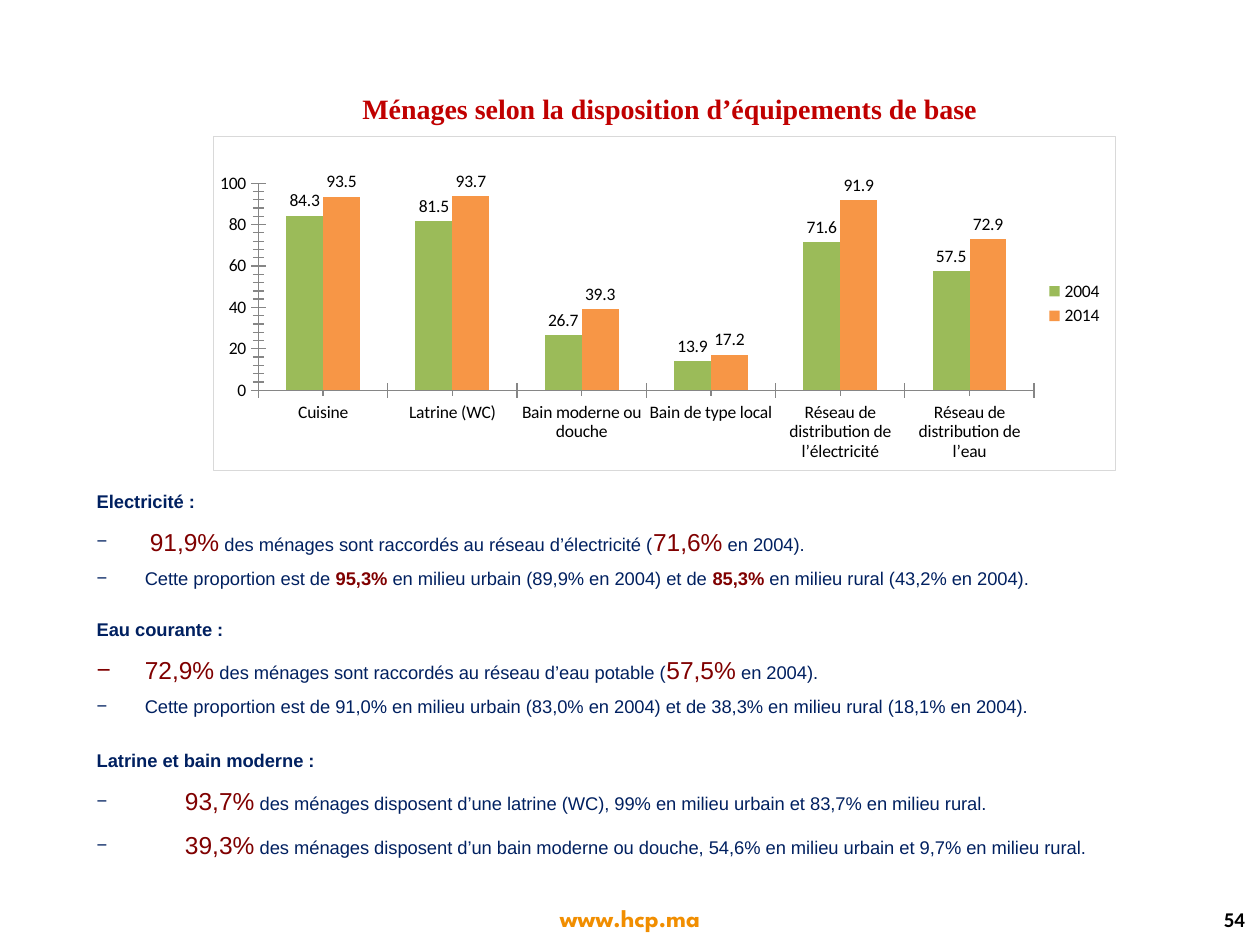
from lxml.etree import SubElement
from pptx import Presentation
from pptx.chart.data import CategoryChartData as ChartData
from pptx.dml.color import RGBColor
from pptx.enum.chart import XL_CHART_TYPE as ChartType, XL_LABEL_POSITION as LabelPos
from pptx.enum.chart import XL_LEGEND_POSITION as LegendPos, XL_TICK_MARK as Tick
from pptx.enum.text import MSO_ANCHOR as Anchor, PP_ALIGN as Align
from pptx.oxml import parse_xml
from pptx.oxml.ns import nsdecls, qn
from pptx.util import Cm, Pt

NAVY, MAROON, BLACK = "002060", "800000", "000000"
EQUIPMENT = ["Cuisine", "Latrine (WC)", "Bain moderne ou douche", "Bain de type local",
             "Réseau de distribution de l’électricité", "Réseau de distribution de l’eau"]
SHARES = {"2004": ("9BBB59", [84.3, 81.5, 26.7, 13.9, 71.6, 57.5]),
          "2014": ("F79646", [93.5, 93.7, 39.3, 17.2, 91.9, 72.9])}
# Key figures stand between bars.
FINDINGS = [
    ("Electricité :", 0, [
        (1.07, 14, NAVY, "|91,9%| des ménages sont raccordés au réseau d’électricité (|71,6%| en 2004)."),
        (0.97, 10.5, NAVY, "Cette proportion est de |95,3%| en milieu urbain (89,9% en 2004) et de "
                           "|85,3%| en milieu rural (43,2% en 2004).")]),
    ("Eau courante :", 10.4, [
        (0.97, 14, MAROON, "|72,9%| des ménages sont raccordés au réseau d’eau potable (|57,5%| en 2004)."),
        (0.97, 10.5, NAVY, "Cette proportion est de 91,0% en milieu urbain (83,0% en 2004) et de "
                           "38,3% en milieu rural (18,1% en 2004).")]),
    ("Latrine et bain moderne :", 12, [
        (1.78, 14, NAVY, "|93,7%| des ménages disposent d’une latrine (WC), 99% en milieu urbain et "
                         "83,7% en milieu rural."),
        (1.78, 14, NAVY, "|39,3%| des ménages disposent d’un bain moderne ou douche, 54,6% en milieu "
                         "urbain et 9,7% en milieu rural.")]),
]


def rgb(value):
    return RGBColor.from_string(value)


class SlideBuilder:
    """Holds the text style and the current slide, and adds elements to it."""

    body_font, body_size, line_spacing = "Arial", 10.5, 1.5

    def __init__(self, slide):
        self.slide = slide

    def style(self, font, name=None, size=None, color=None, bold=None):
        font.name, font.bold = name, bold
        font.size = Pt(size) if size else None
        if color:
            font.color.rgb = rgb(color)

    def box(self, left, top, width, height):
        frame = self.slide.shapes.add_textbox(Cm(left), Cm(top), Cm(width), Cm(height)).text_frame
        frame.word_wrap = True
        return frame

    def label(self, place, text, align, name, size, color, anchor=Anchor.TOP):
        frame = self.box(*place)
        frame.vertical_anchor = anchor
        line = frame.paragraphs[0]
        line.text, line.alignment = text, align
        self.style(line.font, name, size, color, True)

    def bullet(self, line, indent, size, color):
        props = line._p.get_or_add_pPr()
        props.set("marL", str(Cm(indent)))
        props.set("indent", str(-Cm(indent)))
        SubElement(SubElement(props, qn("a:buClr")), qn("a:srgbClr")).set("val", color)
        if size > self.body_size and color == NAVY:
            SubElement(props, qn("a:buSzPct")).set("val", "75000")
        SubElement(props, qn("a:buFont")).set("typeface", self.body_font)
        SubElement(props, qn("a:buChar")).set("char", "−")

    def finding(self, line, indent, size, color, text):
        self.bullet(line, indent, size, color)
        self.style(line.font, self.body_font)
        for index, piece in enumerate(text.split("|")):
            if piece:
                run = line.add_run()
                run.text = piece
                if index % 2:
                    self.style(run.font, None, size, MAROON, size == self.body_size)
                else:
                    self.style(run.font, None, self.body_size, NAVY)

    def findings(self, place, sections):
        frame = self.box(*place)
        for heading, gap, items in sections:
            title = frame.add_paragraph() if gap else frame.paragraphs[0]
            title.text = heading
            if gap:
                title.space_before = Pt(gap)
            self.style(title.font, self.body_font, self.body_size, NAVY, True)
            for item in items:
                self.finding(frame.add_paragraph(), *item)
        for line in frame.paragraphs:
            line.alignment, line.line_spacing = Align.JUSTIFY, self.line_spacing

    def column_chart(self, place, categories, series):
        data = ChartData()
        data.categories = categories
        for year, (_, values) in series.items():
            data.add_series(year, values)
        chart = self.slide.shapes.add_chart(ChartType.COLUMN_CLUSTERED, *map(Cm, place), data).chart
        self.style(chart.font, "Calibri", 10, BLACK)
        chart.has_title = False
        chart.has_legend = True
        chart.legend.position, chart.legend.include_in_layout = LegendPos.RIGHT, False
        columns = chart.plots[0]
        columns.gap_width, columns.overlap, columns.vary_by_categories = 150, 0, False
        for bars, (color, _) in zip(columns.series, series.values()):
            bars.format.fill.solid()
            bars.format.fill.fore_color.rgb = rgb(color)
            labels = bars.data_labels
            labels.show_value, labels.position = True, LabelPos.OUTSIDE_END
        for axis in (chart.category_axis, chart.value_axis):
            axis.major_tick_mark = axis.minor_tick_mark = Tick.CROSS
            axis.format.line.color.rgb = rgb("868686")
        scale = chart.value_axis
        scale.has_major_gridlines = False
        scale.minimum_scale, scale.maximum_scale = 0, 100
        scale.major_unit, scale.minor_unit = 20, 4
        self.frame_chart(chart._chartSpace, (0.05, 0.14, 0.86, 0.62))

    def frame_chart(self, space, plot):
        area = space.chart.plotArea
        for old in area.findall(qn("c:layout")):
            area.remove(old)
        sizes = "".join(f'<c:{key} val="{part}"/>' for key, part in zip("xywh", plot))
        area.insert(0, parse_xml(
            f'<c:layout {nsdecls("c")}><c:manualLayout><c:layoutTarget val="inner"/>'
            f'<c:xMode val="edge"/><c:yMode val="edge"/>{sizes}</c:manualLayout></c:layout>'))
        space.chart.addnext(parse_xml(
            f'<c:spPr {nsdecls("c", "a")}><a:noFill/><a:ln w="{Pt(0.75)}"><a:solidFill>'
            '<a:srgbClr val="D9D9D9"/></a:solidFill></a:ln></c:spPr>'))


def main():
    deck = Presentation()
    deck.slide_width, deck.slide_height = Cm(25.4), Cm(19.05)
    page = SlideBuilder(deck.slides.add_slide(deck.slide_layouts[6]))
    page.label((9.7, 18.08, 6, 0.84), "www.hcp.ma", Align.CENTER, "League Spartan", 14, "F18E00")
    page.label((21.49, 18.08, 3.86, 0.89), "54", Align.RIGHT, "Calibri", 12, BLACK, Anchor.MIDDLE)
    page.label((2.69, 1.73, 21.62, 0.94), "Ménages selon la disposition d’équipements de base",
               Align.CENTER, "Times New Roman", 16, "C00000")
    page.column_chart((4.29, 2.74, 18.21, 6.76), EQUIPMENT, SHARES)
    page.findings((1.7, 9.53, 22.4, 8.18), FINDINGS)
    deck.save("out.pptx")


if __name__ == "__main__":
    main()
